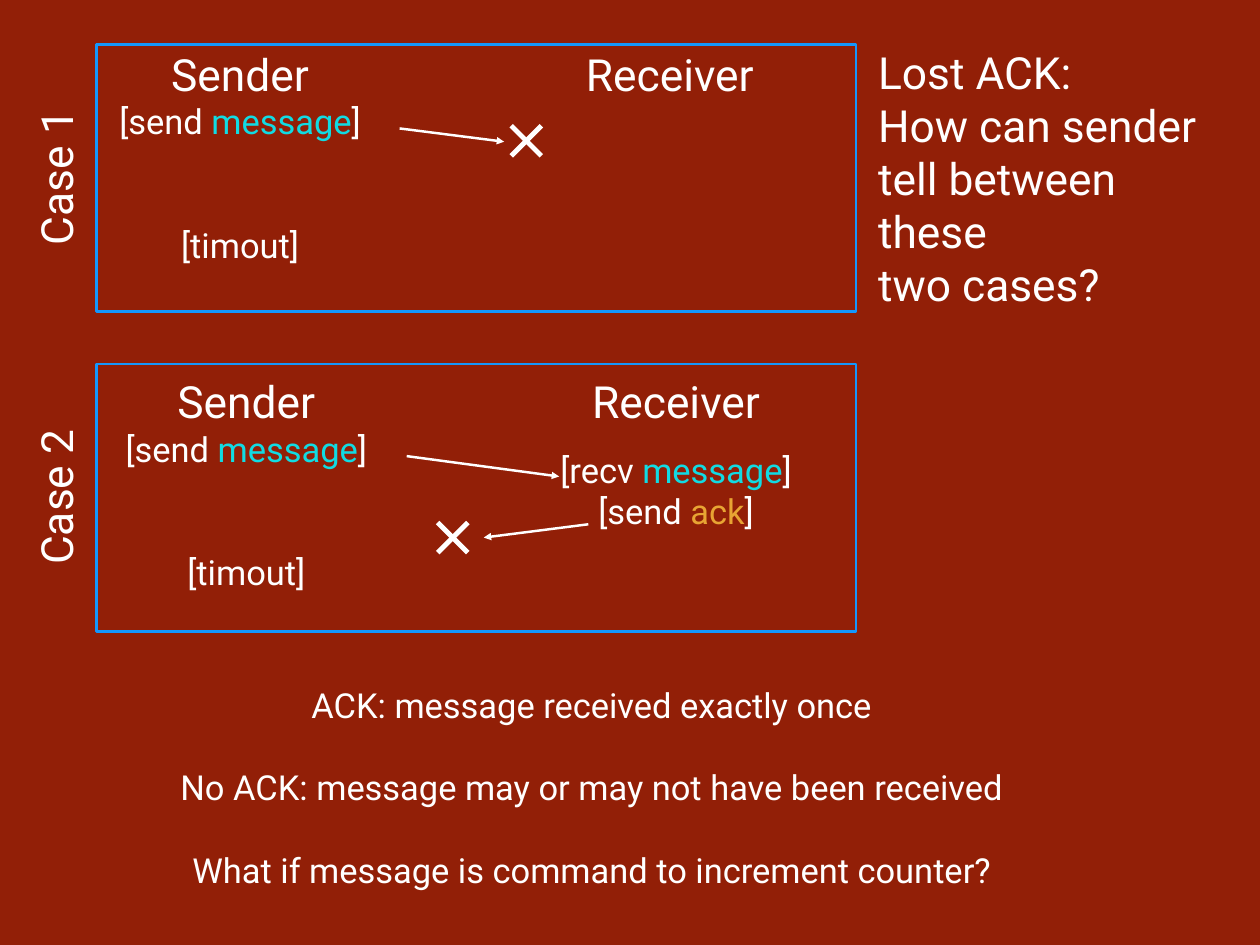
from lxml import etree
from pptx import Presentation
from pptx import util as u
from pptx.dml import color
from pptx.enum import shapes, text
from pptx.oxml import ns

WHITE, CYAN, ORANGE, BLUE, RED = "FFFFFF", "11DBE3", "E8A433", "1497FC", "921F07"
rgb = color.RGBColor.from_string


def write(frame, wording, size=28, accent=CYAN, align=text.PP_ALIGN.CENTER, before=0):
    line = frame.paragraphs[0]
    if line.runs:
        line = frame.add_paragraph()
    line.alignment = align
    line.space_before = u.Pt(before)
    for position, piece in enumerate(wording.split("|")):
        run = line.add_run()
        run.text = piece
        run.font.name = "Roboto"
        run.font.size = u.Pt(size)
        run.font.color.rgb = rgb(accent if position % 2 else WHITE)
    return line


def draw_line(parent, ends, width, arrow=False):
    line = parent.add_connector(shapes.MSO_CONNECTOR.STRAIGHT, *[u.Inches(n) for n in ends])
    line.line.color.rgb = rgb(WHITE)
    line.line.width = u.Pt(width)
    properties = line._element.spPr
    if arrow:
        etree.SubElement(properties.find(ns.qn("a:ln")), ns.qn("a:tailEnd"), type="triangle")
    etree.SubElement(properties, ns.qn("a:effectLst"))


deck = Presentation()
deck.slide_width, deck.slide_height = u.Inches(14.22), u.Inches(10.67)
slide = deck.slides.add_slide(deck.slide_layouts[1])
slide.background.fill.solid()
slide.background.fill.fore_color.rgb = rgb(RED)

question, conclusions = slide.placeholders
question.left, question.top = u.Inches(9.91), u.Inches(0.51)
question.width, question.height = u.Inches(3.77), u.Inches(3.02)
conclusions.left, conclusions.top = u.Inches(1.09), u.Inches(7.67)
conclusions.width, conclusions.height = u.Inches(11.17), u.Inches(2.46)

asking = question.text_frame
asking.margin_left = asking.margin_right = asking.margin_top = asking.margin_bottom = 0
for frame in (asking, conclusions.text_frame):
    frame.word_wrap = True
    frame.auto_size = text.MSO_AUTO_SIZE.NONE
    frame.vertical_anchor = text.MSO_ANCHOR.TOP

for wording in ("Lost ACK:", "How can sender", "tell between these", "two cases?"):
    write(asking, wording, size=36, align=text.PP_ALIGN.LEFT)

for wording, before in (
    ("ACK: message received exactly once", 0),
    ("No ACK: message may or may not have been received", 33.5),
    ("What if message is command to increment counter?", 33.5),
):
    point = write(conclusions.text_frame, wording, before=before)
    layout = point._p.get_or_add_pPr()
    layout.set("marL", "0")
    layout.set("indent", "0")
    etree.SubElement(layout, ns.qn("a:buNone"))

sender = [("Sender", {"size": 36}), ("[send |message|]", {}), ("[timout]", {"before": 67})]
receiver = [("Receiver", {"size": 36})]
replies = [("[recv |message|]", {"before": 17}), ("[send |ack|]", {"accent": ORANGE})]

for case, received in enumerate(([], replies)):
    frame_top = 0.5 + 3.61 * case
    border = slide.shapes.add_shape(
        shapes.MSO_SHAPE.RECTANGLE,
        u.Inches(1.09), u.Inches(frame_top), u.Inches(8.57), u.Inches(3.02))
    border.shadow.inherit = False
    border.fill.background()
    border.line.color.rgb = rgb(BLUE)
    border.line.width = u.Pt(2)

    label = slide.shapes.add_textbox(
        u.Inches(-0.38), u.Inches(frame_top + 1.15), u.Inches(2.01), u.Inches(0.71))
    label.rotation = 270
    label.text_frame.word_wrap = True
    label.text_frame.vertical_anchor = text.MSO_ANCHOR.MIDDLE
    write(label.text_frame, f"Case {case + 1}", size=36)

    for left, steps in ((1.26, sender), (6.11, receiver + received)):
        party = slide.shapes.add_textbox(
            u.Inches(left + 0.07 * case), u.Inches(0.53 + 3.7 * case),
            u.Inches(2.9), u.Inches(2.4))
        events = party.text_frame
        events.word_wrap = True
        events.margin_left = events.margin_right = events.margin_top = events.margin_bottom = 0
        for wording, style in steps:
            write(events, wording, **style)

for message in ((4.51, 1.45, 5.69, 1.6), (4.59, 5.15, 6.31, 5.38), (6.64, 5.92, 5.46, 6.07)):
    draw_line(slide.shapes, message, 2, arrow=True)

for left, top in ((5.77, 1.42), (4.94, 5.9)):
    right, bottom = left + 0.34, top + 0.34
    loss = slide.shapes.add_group_shape().shapes
    draw_line(loss, (left, bottom, right, top), 4)
    draw_line(loss, (right, bottom, left, top), 4)

deck.save("out.pptx")
